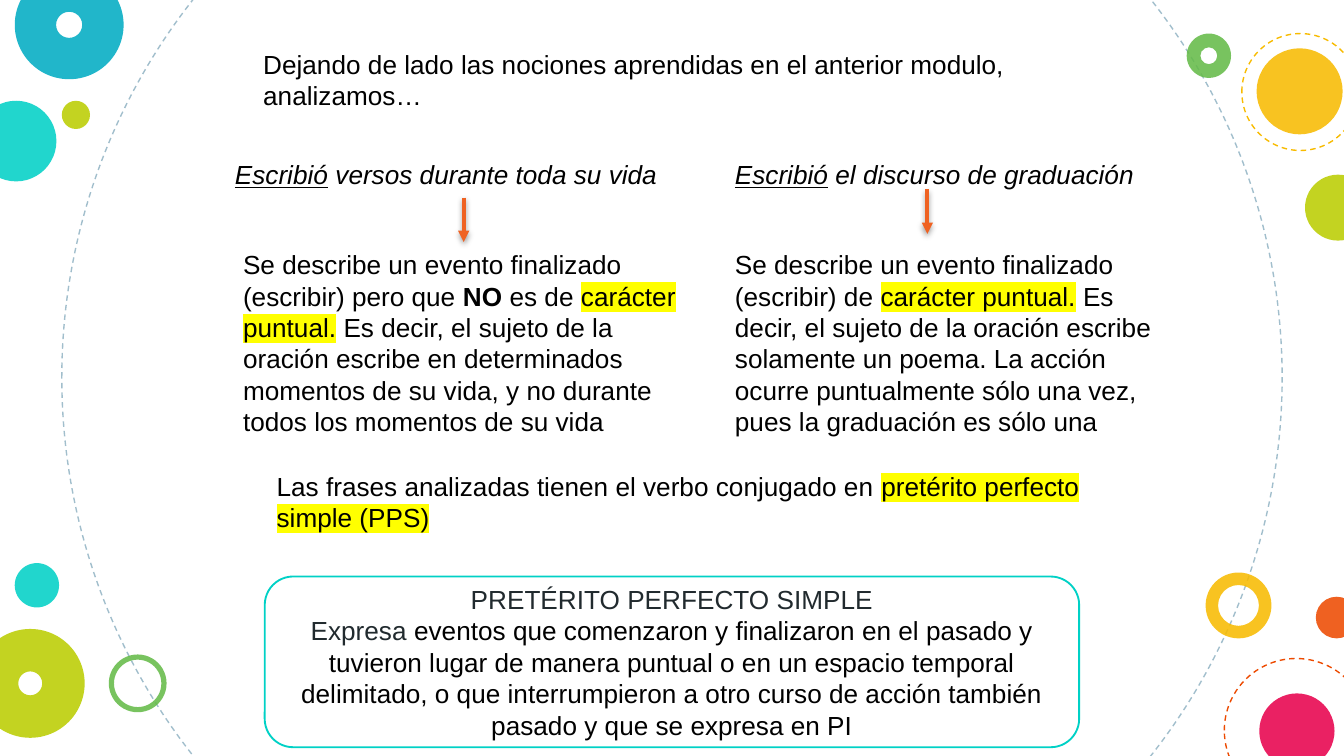
from dataclasses import dataclass, field
from typing import Optional

from lxml.etree import SubElement
from pptx import Presentation
from pptx.dml.color import RGBColor
from pptx.enum.dml import MSO_LINE
from pptx.enum.shapes import MSO_CONNECTOR, MSO_SHAPE
from pptx.enum.text import MSO_ANCHOR, MSO_AUTO_SIZE, PP_ALIGN
from pptx.oxml.ns import qn
from pptx.util import Inches, Pt


@dataclass(frozen=True)
class Theme:
    font: str = "Arial"
    text_size: float = 14
    outline_width: float = 0.75
    box_line_width: float = 1
    arrow_width: float = 2
    bubble_opacity: int = 87
    shadow_opacity: int = 38
    black: str = "000000"
    ink: str = "212A2E"
    white: str = "FFFFFF"
    highlight: str = "FFFF00"
    arrow: str = "EF6222"
    gray: str = "A1BECC"
    turquoise: str = "00D1C6"
    blue: str = "00ACC3"
    lime: str = "BBCD00"
    green: str = "65BB48"
    yellow: str = "F8BB00"
    orange: str = "ED4A00"
    pink: str = "E8004C"


THEME = Theme()


@dataclass(frozen=True)
class Circle:
    left: float
    top: float
    diameter: float
    color: str
    ring: Optional[float] = None
    dashed: bool = False


@dataclass(frozen=True)
class Phrase:
    text: str
    formats: dict = field(default_factory=dict)
    color: str = THEME.black
    marked: bool = False


@dataclass(frozen=True)
class TextBlock:
    left: float
    top: float
    width: float
    height: float
    phrases: tuple


@dataclass(frozen=True)
class Arrow:
    x: float
    top: float
    length: float = 0.33


CIRCLES = (
    Circle(0.46, -1.73, 9.08, THEME.gray, dashed=True),
    Circle(-0.18, 0.75, 0.6, THEME.turquoise),
    Circle(8.97, 4.26, 0.49, THEME.yellow, ring=0.19),
    Circle(0.11, -0.22, 0.81, THEME.blue, ring=0.38),
    Circle(0.46, 0.75, 0.21, THEME.lime),
    Circle(9.11, 4.9, 1.07, THEME.orange, dashed=True),
    Circle(0.81, 4.87, 0.43, THEME.green, ring=0.09),
    Circle(9.79, 4.44, 0.31, THEME.orange),
    Circle(-0.18, 4.68, 0.81, THEME.lime, ring=0.39),
    Circle(9.37, 5.16, 0.56, THEME.pink),
    Circle(8.83, 0.25, 0.33, THEME.green, ring=0.31),
    Circle(9.35, 0.36, 0.64, THEME.yellow),
    Circle(9.71, 1.3, 0.49, THEME.lime),
    Circle(9.24, 0.25, 0.87, THEME.yellow, dashed=True),
    Circle(0.11, 4.19, 0.33, THEME.turquoise),
)

ITALIC = {"italic": True}
VERB = Phrase("Escribió", {"italic": True, "underline": True})
PUNCTUAL = Phrase("carácter puntual.", marked=True)

TEXT_BLOCKS = (
    TextBlock(1.86, 0.31, 6.52, 0.57, (
        Phrase("Dejando de lado las nociones aprendidas en el anterior modulo, analizamos…"),
    )),
    TextBlock(1.65, 1.13, 3.6, 0.34, (VERB, Phrase(" versos durante toda su vida", ITALIC))),
    TextBlock(5.37, 1.13, 3.24, 0.34, (VERB, Phrase(" el discurso de graduación", ITALIC))),
    TextBlock(1.71, 1.8, 3.48, 1.51, (
        Phrase("Se describe un evento finalizado (escribir) pero que "),
        Phrase("NO", {"bold": True}),
        Phrase(" es de "),
        PUNCTUAL,
        Phrase(" Es decir, el sujeto de la oración escribe en determinados momentos "
               "de su vida, y no durante todos los momentos de su vida"),
    )),
    TextBlock(5.37, 1.8, 3.48, 1.51, (
        Phrase("Se describe un evento finalizado (escribir) de "),
        PUNCTUAL,
        Phrase(" Es decir, el sujeto de la oración escribe solamente un poema. La acción "
               "ocurre puntualmente sólo una vez, pues la graduación es sólo una"),
    )),
    TextBlock(1.96, 3.45, 6.59, 0.57, (
        Phrase("Las frases analizadas tienen el verbo conjugado en "),
        Phrase("pretérito perfecto simple (PPS)", marked=True),
    )),
)

ARROWS = (Arrow(3.45, 1.47), Arrow(6.9, 1.41))

DEFINITION_TITLE = (Phrase("PRETÉRITO PERFECTO SIMPLE", color=THEME.ink),)
DEFINITION = (
    Phrase("Expresa ", color=THEME.ink),
    Phrase("eventos que comenzaron y finalizaron en el pasado y tuvieron lugar de manera "
           "puntual o en un espacio temporal delimitado, o que interrumpieron a otro curso "
           "de acción también pasado y que se expresa en PI"),
)


def rgb(color: str) -> RGBColor:
    return RGBColor.from_string(color)


def add_alpha(color_element, opacity: int) -> None:
    SubElement(color_element, qn("a:alpha"), val=str(opacity * 1000))


def draw_circle(slide, circle: Circle) -> None:
    kind = MSO_SHAPE.OVAL if circle.ring is None else MSO_SHAPE.DONUT
    shape = slide.shapes.add_shape(kind, Inches(circle.left), Inches(circle.top),
                                   Inches(circle.diameter), Inches(circle.diameter))
    shape.shadow.inherit = False
    if circle.ring is not None:
        shape.adjustments[0] = circle.ring
    if circle.dashed:
        shape.fill.background()
        shape.line.color.rgb = rgb(circle.color)
        shape.line.width = Pt(THEME.outline_width)
        shape.line.dash_style = MSO_LINE.DASH
        return
    shape.line.fill.background()
    shape.fill.solid()
    shape.fill.fore_color.rgb = rgb(circle.color)
    fill = shape.element.spPr.find(qn("a:solidFill"))
    add_alpha(fill.find(qn("a:srgbClr")), THEME.bubble_opacity)


def write_phrases(paragraph, phrases: tuple) -> None:
    for phrase in phrases:
        run = paragraph.add_run()
        run.text = phrase.text
        formats = {"name": THEME.font, "size": Pt(THEME.text_size), **phrase.formats}
        for name, value in formats.items():
            setattr(run.font, name, value)
        run.font.color.rgb = rgb(phrase.color)
        if phrase.marked:
            properties = run._r.get_or_add_rPr()
            highlight = SubElement(properties, qn("a:highlight"))
            SubElement(highlight, qn("a:srgbClr"), val=THEME.highlight)
            properties.find(qn("a:latin")).addprevious(highlight)


def draw_text(slide, block: TextBlock) -> None:
    shape = slide.shapes.add_textbox(Inches(block.left), Inches(block.top),
                                     Inches(block.width), Inches(block.height))
    frame = shape.text_frame
    frame.word_wrap = True
    frame.auto_size = MSO_AUTO_SIZE.SHAPE_TO_FIT_TEXT
    write_phrases(frame.paragraphs[0], block.phrases)


def draw_arrow(slide, arrow: Arrow) -> None:
    connector = slide.shapes.add_connector(
        MSO_CONNECTOR.STRAIGHT, Inches(arrow.x), Inches(arrow.top),
        Inches(arrow.x), Inches(arrow.top + arrow.length))
    connector.line.color.rgb = rgb(THEME.arrow)
    connector.line.width = Pt(THEME.arrow_width)
    properties = connector._element.spPr
    SubElement(properties.find(qn("a:ln")), qn("a:tailEnd"), type="triangle")
    effects = SubElement(properties, qn("a:effectLst"))
    shadow = SubElement(effects, qn("a:outerShdw"), blurRad=str(Pt(3.1)),
                        dist=str(Pt(1.6)), dir=str(90 * 60000), rotWithShape="0")
    add_alpha(SubElement(shadow, qn("a:srgbClr"), val=THEME.black), THEME.shadow_opacity)


def draw_definition(slide) -> None:
    shape = slide.shapes.add_shape(MSO_SHAPE.ROUNDED_RECTANGLE, Inches(1.97), Inches(4.29),
                                   Inches(6.06), Inches(1.27))
    shape.shadow.inherit = False
    shape.fill.solid()
    shape.fill.fore_color.rgb = rgb(THEME.white)
    shape.line.color.rgb = rgb(THEME.turquoise)
    shape.line.width = Pt(THEME.box_line_width)
    frame = shape.text_frame
    frame.word_wrap = True
    frame.vertical_anchor = MSO_ANCHOR.MIDDLE
    for paragraph, phrases in ((frame.paragraphs[0], DEFINITION_TITLE),
                               (frame.add_paragraph(), DEFINITION)):
        paragraph.alignment = PP_ALIGN.CENTER
        write_phrases(paragraph, phrases)


def main() -> None:
    presentation = Presentation()
    presentation.slide_width = Inches(10)
    presentation.slide_height = Inches(10 * 9 / 16)
    slide = presentation.slides.add_slide(presentation.slide_layouts[6])
    for circle in CIRCLES:
        draw_circle(slide, circle)
    for block in TEXT_BLOCKS:
        draw_text(slide, block)
    for arrow in ARROWS:
        draw_arrow(slide, arrow)
    draw_definition(slide)
    presentation.save("out.pptx")


if __name__ == "__main__":
    main()
